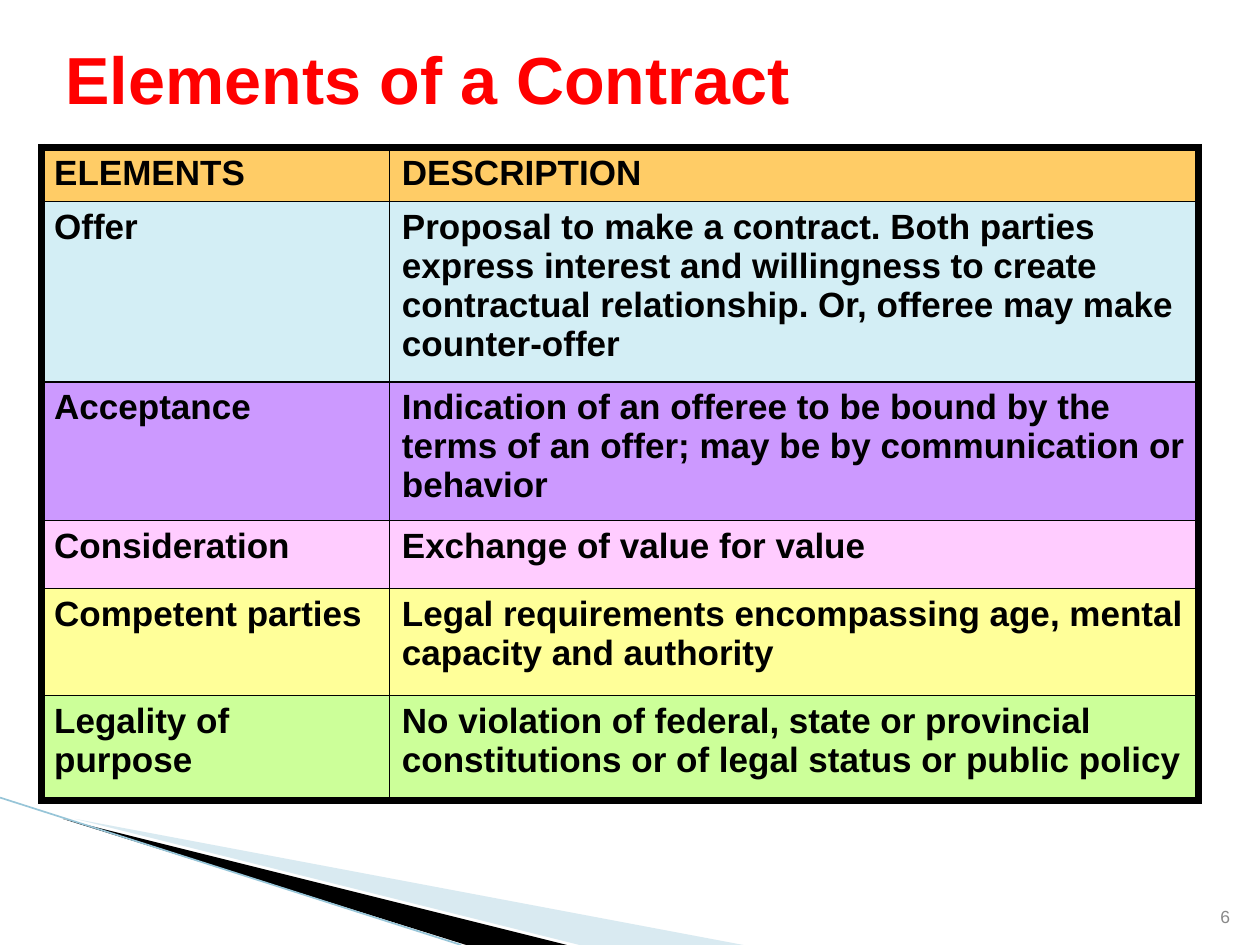
import pptx
import pptx.util
import pptx.dml.color
import pptx.enum.shapes
import pptx.enum.text
import pptx.oxml
import pptx.oxml.ns

HEX = {
    "black": "000000", "red": "FF0000", "gray": "898989",
    "mist": "A0CBDC", "edge": "97C5D8",
    "gold": "FFCC66", "sky": "D3EEF5", "violet": "CC99FF",
    "pink": "FFCCFF", "yellow": "FFFF99", "green": "CCFF99",
}
ALIGN = pptx.enum.text.PP_ALIGN
ANCHOR = pptx.enum.text.MSO_ANCHOR
NS = pptx.oxml.ns.nsdecls("a")


def color(name):
    return pptx.dml.color.RGBColor.from_string(HEX[name])


def write(frame, text, size, shade, bold=False, align=ALIGN.LEFT):
    frame.text = text
    para = frame.paragraphs[0]
    para.alignment = align
    form = {"name": "Arial", "size": pptx.util.Pt(size), "bold": bold}
    for key, value in form.items():
        setattr(para.font, key, value)
    para.font.color.rgb = color(shade)


deck = pptx.Presentation()
deck.slide_width = pptx.util.Inches(10)
deck.slide_height = pptx.util.Inches(7.5)
slide = deck.slides.add_slide(deck.slide_layouts[5])
shapes = slide.shapes

# The slide is a grid of 100 columns by 75 rows
unit = deck.slide_width // 100

# Corner wedges
wedges = [
    ("mist", 40, [(5.5, 65), (59.3, 75), (45.5, 75)]),
    ("black", 100, [(5.3, 64.9), (45.3, 75), (36.9, 75)]),
]
for shade, alpha, points in wedges:
    path = shapes.build_freeform(*points[0], scale=unit)
    path.add_line_segments(points[1:])
    wedge = path.convert_to_shape()
    wedge.shadow.inherit = False
    wedge.fill.solid()
    wedge.fill.fore_color.rgb = color(shade)
    wedge.line.fill.background()
    if alpha < 100:
        tint = wedge.fill._xPr.find(".//" + pptx.oxml.ns.qn("a:srgbClr"))
        tint.append(pptx.oxml.parse_xml(f'<a:alpha {NS} val="{alpha * 1000}"/>'))

edge = shapes.add_connector(
    pptx.enum.shapes.MSO_CONNECTOR.STRAIGHT,
    0, int(63.3 * unit), int(36.6 * unit), 75 * unit)
edge.line.color.rgb = color("edge")
edge.line.width = pptx.util.Pt(0.95)
edge._element.spPr.append(pptx.oxml.parse_xml(f"<a:effectLst {NS}/>"))

# Table: fill, row height, element, description
rows = [
    ("gold", 4.3, "ELEMENTS", "DESCRIPTION"),
    ("sky", 14.3, "Offer",
     "Proposal to make a contract. Both parties express interest and "
     "willingness to create contractual relationship. Or, offeree may make "
     "counter-offer"),
    ("violet", 11, "Acceptance",
     "Indication of an offeree to be bound by the terms of an offer; may be "
     "by communication or behavior"),
    ("pink", 5.4, "Consideration", "Exchange of value for value"),
    ("yellow", 8.5, "Competent parties",
     "Legal requirements encompassing age, mental capacity and authority"),
    ("green", 8.3, "Legality of purpose",
     "No violation of federal, state or provincial constitutions or of legal "
     "status or public policy"),
]
widths = [27.6, 64.2]
last = len(rows) - 1
table = shapes.add_table(
    len(rows), len(widths), int(3.3 * unit), int(11.7 * unit),
    int(sum(widths) * unit), int(sum(row[1] for row in rows) * unit)).table
for col, width in zip(table.columns, widths):
    col.width = int(width * unit)

for r, (shade, height, *texts) in enumerate(rows):
    table.rows[r].height = int(height * unit)
    for c, text in enumerate(texts):
        cell = table.cell(r, c)
        write(cell.text_frame, text, 20, "black", bold=True)
        outer = {"L": c == 0, "R": c == 1, "T": r == 0, "B": r == last}
        for side, thick in outer.items():
            weight = pptx.util.Pt(4.5 if thick else 1)
            cell._tc.get_or_add_tcPr().append(pptx.oxml.parse_xml(
                f'<a:ln{side} {NS} w="{weight}"><a:solidFill>'
                f'<a:srgbClr val="{HEX["black"]}"/></a:solidFill></a:ln{side}>'))
        cell.fill.solid()
        cell.fill.fore_color.rgb = color(shade)

# Page number
page = shapes.add_textbox(
    int(94.6 * unit), int(70.1 * unit), 4 * unit, 4 * unit).text_frame
page.word_wrap = True
page.vertical_anchor = ANCHOR.BOTTOM
write(page, "6", 10, "gray", align=ALIGN.RIGHT)

# Title
title = shapes.title
place = {"left": 4.2, "top": 0, "width": 90, "height": 12.4}
for key, value in place.items():
    setattr(title, key, int(value * unit))
title.text_frame.vertical_anchor = ANCHOR.MIDDLE
write(title.text_frame, "Elements of a Contract", 38, "red", bold=True)

deck.save("out.pptx")
